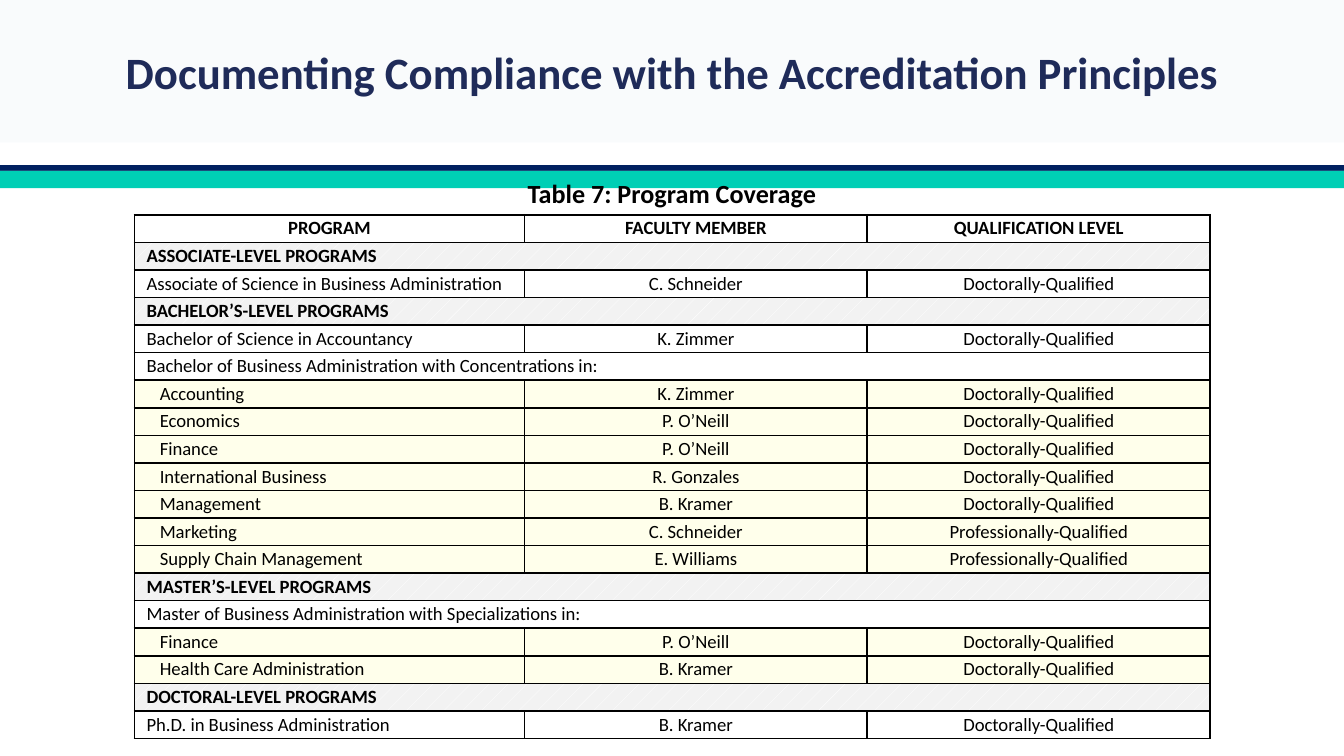
from dataclasses import dataclass

from lxml import etree
from pptx import Presentation
from pptx import util as u
from pptx.dml import color
from pptx.enum import dml, shapes, text
from pptx.oxml import ns


@dataclass(frozen=True)
class Theme:
    font: str = "Calibri"
    navy: str = "002060"
    teal: str = "00CFB5"
    white: str = "FFFFFF"
    ink: str = "000000"
    heading: str = "1F2B59"
    heading_band: str = "E8F0F4"
    heading_opacity: int = 25
    level_band: str = "F2F2F2"
    concentration: str = "FFFFEB"
    heading_size: int = 24
    caption_size: int = 14
    table_size: int = 10
    border: int = 1


THEME = Theme()
DOCTORAL = "Doctorally-Qualified"
PROFESSIONAL = "Professionally-Qualified"
COVERAGE = [
    ("header", "PROGRAM", "FACULTY MEMBER", "QUALIFICATION LEVEL"),
    ("level", "ASSOCIATE-LEVEL PROGRAMS"),
    ("program", "Associate of Science in Business Administration", "C. Schneider", DOCTORAL),
    ("level", "BACHELOR’S-LEVEL PROGRAMS"),
    ("program", "Bachelor of Science in Accountancy", "K. Zimmer", DOCTORAL),
    ("group", "Bachelor of Business Administration with Concentrations in:"),
    ("concentration", "Accounting", "K. Zimmer", DOCTORAL),
    ("concentration", "Economics", "P. O’Neill", DOCTORAL),
    ("concentration", "Finance", "P. O’Neill", DOCTORAL),
    ("concentration", "International Business", "R. Gonzales", DOCTORAL),
    ("concentration", "Management", "B. Kramer", DOCTORAL),
    ("concentration", "Marketing", "C. Schneider", PROFESSIONAL),
    ("concentration", "Supply Chain Management", "E. Williams", PROFESSIONAL),
    ("level", "MASTER’S-LEVEL PROGRAMS"),
    ("group", "Master of Business Administration with Specializations in:"),
    ("concentration", "Finance", "P. O’Neill", DOCTORAL),
    ("concentration", "Health Care Administration", "B. Kramer", DOCTORAL),
    ("level", "DOCTORAL-LEVEL PROGRAMS"),
    ("program", "Ph.D. in Business Administration", "B. Kramer", DOCTORAL),
]


def rgb(value):
    return color.RGBColor.from_string(value)


def apply(target, values):
    for name, value in values.items():
        setattr(target, name, value)


def place(part, box):
    apply(part, dict(zip(("left", "top", "width", "height"), map(u.Cm, box))))


def margins(left, top, right, bottom):
    names = ("margin_left", "margin_top", "margin_right", "margin_bottom")
    return dict(zip(names, map(u.Cm, (left, top, right, bottom))))


def write(paragraph, words, size, ink, bold, align, **spacing):
    run = paragraph.add_run()
    run.text = words
    apply(run.font, {"name": THEME.font, "size": u.Pt(size), "bold": bold})
    run.font.color.rgb = rgb(ink)
    apply(paragraph, {"alignment": align, **spacing})


def add_heading(slide, box):
    heading = slide.shapes.title
    place(heading, box)
    heading.fill.solid()
    heading.fill.fore_color.rgb = rgb(THEME.heading_band)
    tint = heading.element.spPr.find(".//" + ns.qn("a:srgbClr"))
    etree.SubElement(tint, ns.qn("a:alpha"), val=str(THEME.heading_opacity * 1000))
    apply(heading.text_frame, {
        "word_wrap": True,
        "auto_size": text.MSO_AUTO_SIZE.NONE,
        "vertical_anchor": text.MSO_ANCHOR.MIDDLE,
        **margins(0, 0, 0, 0),
    })
    write(heading.text_frame.paragraphs[0],
          "Documenting Compliance with the Accreditation Principles",
          THEME.heading_size, THEME.heading, True, text.PP_ALIGN.CENTER)


def add_divider(slide, box):
    left, top, width, height = box
    inset = 0.11
    bands = [
        (THEME.navy, 0, 0.58),
        (THEME.white, inset, height - inset),
        (THEME.teal, inset, 0.33),
    ]
    for fill, offset, depth in bands:
        band = slide.shapes.add_shape(shapes.MSO_SHAPE.RECTANGLE, 0, 0, 0, 0)
        place(band, (left, top + offset, width, depth))
        band.shadow.inherit = False
        band.fill.solid()
        band.fill.fore_color.rgb = rgb(fill)
        band.line.fill.background()


def add_caption(slide, box):
    caption = slide.shapes.add_textbox(*map(u.Cm, box))
    apply(caption.text_frame, {"word_wrap": True, **margins(0.51, 0.13, 0.51, 0)})
    write(caption.text_frame.paragraphs[0], "Table 7: Program Coverage",
          THEME.caption_size, THEME.ink, True, text.PP_ALIGN.CENTER)


def outline(cell):
    properties = cell._tc.get_or_add_tcPr()
    for position, side in enumerate(("lnL", "lnR", "lnT", "lnB")):
        edge = etree.Element(ns.qn("a:" + side), w=str(u.Pt(THEME.border)))
        solid = etree.SubElement(edge, ns.qn("a:solidFill"))
        etree.SubElement(solid, ns.qn("a:srgbClr"), val=THEME.ink)
        properties.insert(position, edge)


def shade(cell, kind):
    if kind == "level":
        cell.fill.patterned()
        cell.fill.pattern = dml.MSO_PATTERN.PERCENT_5
        cell.fill.fore_color.rgb = rgb(THEME.white)
        cell.fill.back_color.rgb = rgb(THEME.level_band)
    elif kind == "concentration":
        cell.fill.solid()
        cell.fill.fore_color.rgb = rgb(THEME.concentration)
    else:
        cell.fill.background()


def add_coverage(slide, box):
    widths = (7.37, 6.48, 6.48)
    table = slide.shapes.add_table(len(COVERAGE), len(widths), *map(u.Cm, box)).table
    apply(table, {"first_row": False, "horz_banding": False})
    for column, width in zip(table.columns, widths):
        column.width = u.Cm(width)
    for row, (kind, *entries) in enumerate(COVERAGE):
        table.rows[row].height = u.Cm(box[3] / len(COVERAGE))
        for column in range(len(widths)):
            cell = table.cell(row, column)
            apply(cell, {"vertical_anchor": text.MSO_ANCHOR.MIDDLE,
                         **margins(0.23, 0, 0.23, 0)})
            shade(cell, kind)
            outline(cell)
        if len(entries) == 1:
            table.cell(row, 0).merge(table.cell(row, len(widths) - 1))
        for column, entry in enumerate(entries):
            paragraph = table.cell(row, column).text_frame.paragraphs[0]
            centred = column > 0 or kind == "header"
            write(paragraph, entry, THEME.table_size, THEME.ink,
                  kind in ("header", "level"),
                  text.PP_ALIGN.CENTER if centred else text.PP_ALIGN.LEFT,
                  space_before=u.Pt(3), space_after=u.Pt(3))
            if kind == "concentration" and column == 0:
                paragraph._p.get_or_add_pPr().set("marL", str(u.Cm(0.25)))


def main():
    deck = Presentation()
    width, height = 25.4, 14.29
    apply(deck, {"slide_width": u.Cm(width), "slide_height": u.Cm(height)})
    slide = deck.slides.add_slide(deck.slide_layouts.get_by_name("Title Only"))
    add_heading(slide, (0, 0, width, 2.69))
    add_divider(slide, (0, 3.12, width, height - 3.12))
    add_caption(slide, (0, 3.23, width, height - 3.23))
    add_coverage(slide, (2.54, 4.06, 20.33, 9.9))
    deck.save("out.pptx")


if __name__ == "__main__":
    main()
